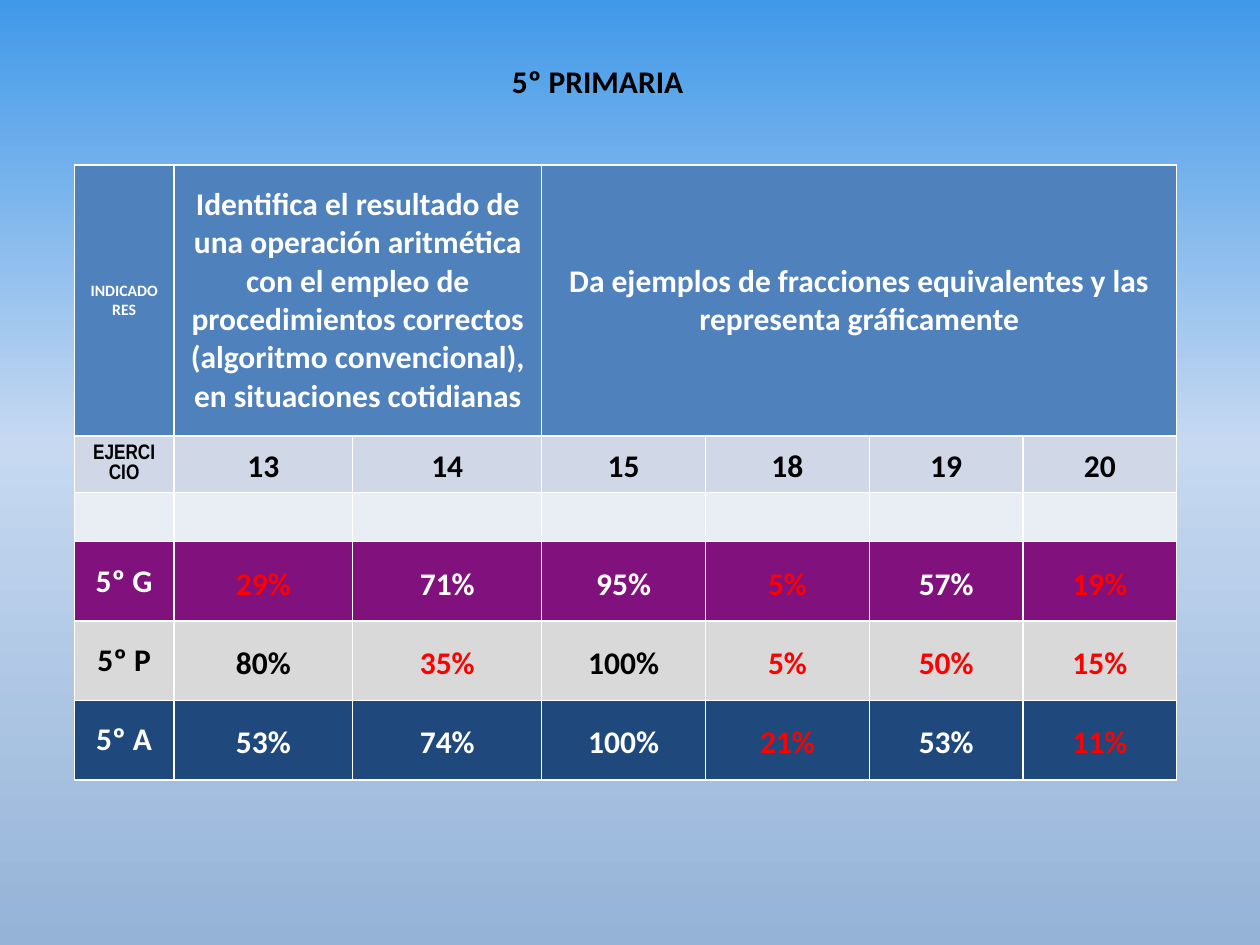
from lxml.etree import SubElement
from pptx import Presentation
from pptx.dml.color import RGBColor
from pptx.enum.text import MSO_ANCHOR, MSO_AUTO_SIZE, PP_ALIGN
from pptx.oxml.ns import qn
from pptx.util import Inches, Pt

COLORS = {
    "white": "FFFFFF", "black": "000000", "red": "FF0000",
    "header": "4F81BD", "exercise": "D0D8E8", "blank": "E9EDF4",
    "purple": "81117C", "gray": "D9D9D9", "navy": "1F497D",
    "bottom": "95B3D7", "middle": "C6D9F1", "top": "4199E9",
}
COLUMN_WIDTHS = [0.79, 1.42, 1.5, 1.3, 1.3, 1.22, 1.22]
ROW_HEIGHTS = [2.15, 0.45, 0.39, 0.63, 0.63, 0.63]
INDICATORS = [
    (1, 2, "Identifica el resultado de una operación aritmética con el empleo de "
           "procedimientos correctos (algoritmo convencional), en situaciones cotidianas"),
    (3, 6, "Da ejemplos de fracciones equivalentes y las representa gráficamente"),
]
EXERCISES = [13, 14, 15, 18, 19, 20]
CLASSES = [
    ("5º G", "purple", "white", [29, 71, 95, 5, 57, 19]),
    ("5º P", "gray", "black", [80, 35, 100, 5, 50, 15]),
    ("5º A", "navy", "white", [53, 74, 100, 21, 53, 11]),
]
LOW_SCORE = 50


class SlideBuilder:
    font = "Calibri"
    size = 18

    def __init__(self, deck):
        self.page = deck.slides.add_slide(deck.slide_layouts[5])

    def background(self, stops):
        fill = self.page.background.fill
        fill.gradient()
        fill.gradient_angle = 90
        stop_list = self.page.background._cSld.find(".//" + qn("a:gsLst"))
        stop_list.clear()
        for percent, color in stops:
            stop = SubElement(stop_list, qn("a:gs"), pos=str(percent * 1000))
            SubElement(stop, qn("a:srgbClr"), val=COLORS[color])

    def text(self, frame, text, color, size=None, font=None, spacing=None):
        frame.text = text
        para = frame.paragraphs[0]
        para.alignment = PP_ALIGN.CENTER
        if spacing:
            para.line_spacing = spacing
        for span in para.runs:
            span.font.name = font or self.font
            span.font.size = Pt(size or self.size)
            span.font.bold = True
            span.font.color.rgb = RGBColor.from_string(COLORS[color])

    def title(self, text, left, top, width, height):
        box = self.page.shapes.title
        box.left, box.top = Inches(left), Inches(top)
        box.width, box.height = Inches(width), Inches(height)
        frame = box.text_frame
        self.text(frame, text, "black")
        frame.word_wrap = False
        frame.auto_size = MSO_AUTO_SIZE.SHAPE_TO_FIT_TEXT

    def table(self, left, top, widths, heights):
        table = self.page.shapes.add_table(
            len(heights), len(widths), Inches(left), Inches(top),
            Inches(sum(widths)), Inches(sum(heights))).table
        for column, width in zip(table.columns, widths):
            column.width = Inches(width)
        for row, height in zip(table.rows, heights):
            row.height = Inches(height)
        return table

    def cell(self, cell, text, fill, color, **style):
        cell.fill.solid()
        cell.fill.fore_color.rgb = RGBColor.from_string(COLORS[fill])
        cell.vertical_anchor = MSO_ANCHOR.MIDDLE
        cell.margin_top = cell.margin_bottom = 0
        self.text(cell.text_frame, text, color, **style)

    def value(self, cell, text, fill, color):
        cell.margin_left = cell.margin_right = Inches(0.07)
        self.cell(cell, text, fill, color, spacing=1.15)


def main():
    deck = Presentation()
    deck.slide_width, deck.slide_height = Inches(10), Inches(7.5)
    builder = SlideBuilder(deck)
    builder.background([(0, "bottom"), (53, "middle"), (100, "top")])
    builder.title(" 5º PRIMARIA", 3.9, 0.44, 1.63, 0.4)
    table = builder.table(0.59, 1.31, COLUMN_WIDTHS, ROW_HEIGHTS)

    builder.cell(table.cell(0, 0), "INDICADORES", "header", "white", size=9)
    for first, last, text in INDICATORS:
        table.cell(0, first).merge(table.cell(0, last))
        builder.cell(table.cell(0, first), text, "header", "white")

    builder.cell(table.cell(1, 0), "EJERCICIO", "exercise", "black",
                 size=12, font="Arial Narrow")
    for column, number in enumerate(EXERCISES, 1):
        builder.value(table.cell(1, column), str(number), "exercise", "black")

    for column in range(len(COLUMN_WIDTHS)):
        builder.cell(table.cell(2, column), "", "blank", "black")

    for row, (name, fill, color, scores) in enumerate(CLASSES, 3):
        builder.cell(table.cell(row, 0), name, fill, color)
        for column, score in enumerate(scores, 1):
            score_color = "red" if score <= LOW_SCORE else color
            builder.value(table.cell(row, column), f"{score}%", fill, score_color)

    deck.save("out.pptx")


if __name__ == "__main__":
    main()
